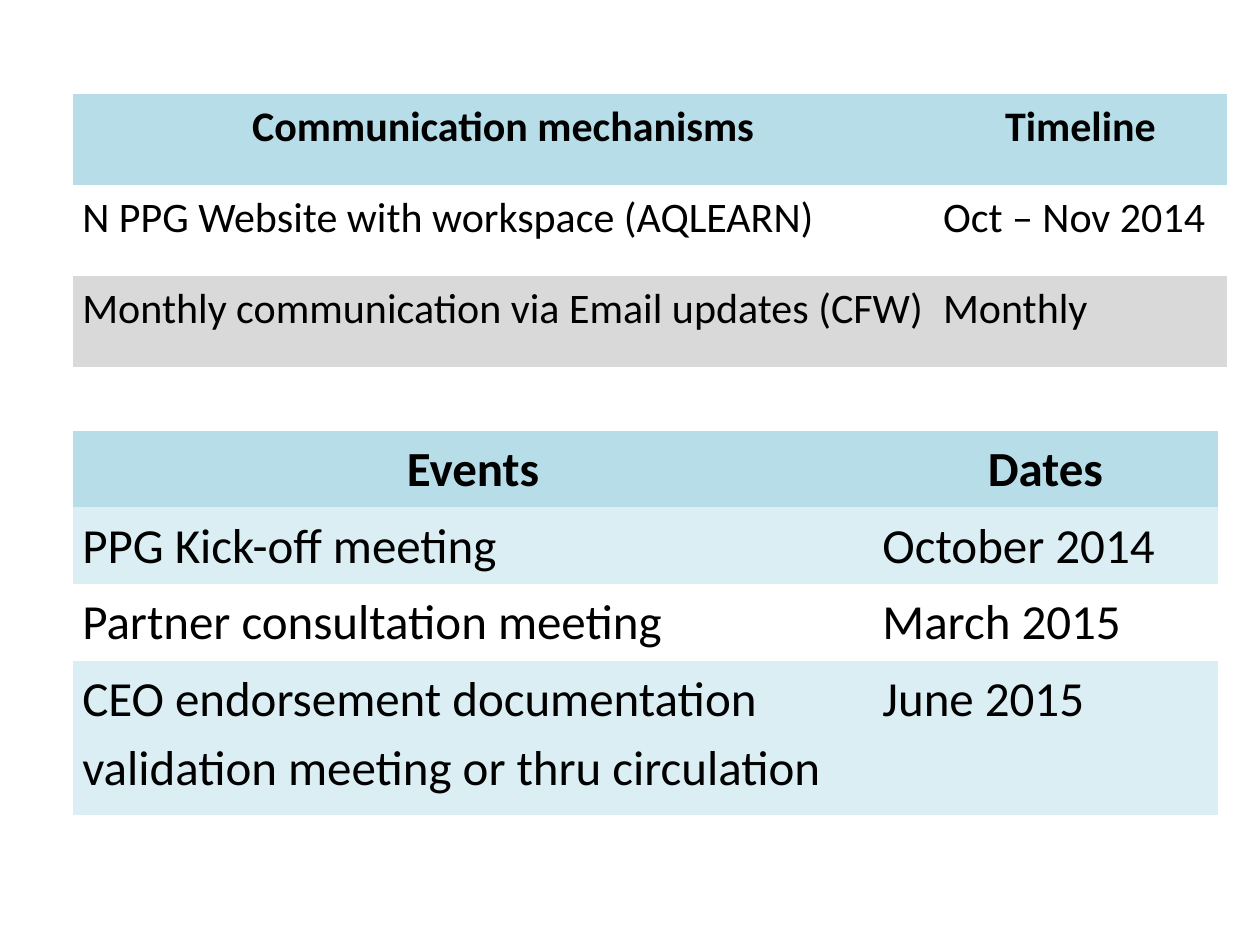
from dataclasses import dataclass

import pptx
import pptx.dml.color
import pptx.enum.text
import pptx.oxml.ns
import pptx.util

Cm = pptx.util.Cm
ALIGN = pptx.enum.text.PP_ALIGN


@dataclass(frozen=True)
class Theme:
    font: str = "Calibri"
    text: str = "000000"
    header: str = "B6DDE8"
    grey_band: str = "D9D9D9"
    blue_band: str = "DAEEF3"
    plan_size: int = 24
    event_size: int = 28
    line_spacing: float = 1.15
    plain_style: str = "{2D5ABB26-0587-4C30-8999-92F81FD0307C}"


THEME = Theme()


@dataclass(frozen=True)
class Row:
    texts: tuple[str, str]
    height: float
    fill: str | None = None


@dataclass(frozen=True)
class Schedule:
    top: float
    widths: tuple[float, float]
    size: int
    rows: tuple[Row, ...]
    left: float = 1.47


SCHEDULES = (
    Schedule(1.9, (17.35, 5.92), THEME.plan_size, (
        Row(("Communication mechanisms", "Timeline"), 1.83, THEME.header),
        Row(("N PPG Website with workspace (AQLEARN)", "Oct – Nov 2014"), 1.83),
        Row(("Monthly communication via Email updates (CFW)", "Monthly"),
            1.83, THEME.grey_band),
    )),
    Schedule(8.68, (16.13, 6.95), THEME.event_size, (
        Row(("Events", "Dates"), 1.55, THEME.header),
        Row(("PPG Kick-off meeting", "October 2014"), 1.55, THEME.blue_band),
        Row(("Partner consultation meeting", "March 2015"), 1.55),
        Row(("CEO endorsement documentation validation meeting or thru circulation",
             "June 2015"), 3.1, THEME.blue_band),
    )),
)


def write_text(tf, text: str, *, size: int, bold: bool = False,
               align=ALIGN.LEFT) -> None:
    p = tf.paragraphs[0]
    p.alignment = align
    p.line_spacing = THEME.line_spacing
    r = p.add_run()
    r.text = text
    r.font.name = THEME.font
    r.font.size = pptx.util.Pt(size)
    r.font.bold = bold
    r.font.color.rgb = pptx.dml.color.RGBColor.from_string(THEME.text)


def fill_cell(cell, fill: str | None) -> None:
    cell.margin_left = cell.margin_right = Cm(0.19)
    cell.margin_top = cell.margin_bottom = 0
    if fill is None:
        cell.fill.background()
    else:
        cell.fill.solid()
        cell.fill.fore_color.rgb = pptx.dml.color.RGBColor.from_string(fill)


def draw_schedule(s, schedule: Schedule) -> None:
    rows, widths = schedule.rows, schedule.widths
    table = s.shapes.add_table(
        len(rows), len(widths), Cm(schedule.left), Cm(schedule.top),
        Cm(sum(widths)), Cm(sum(row.height for row in rows))).table
    table.horz_banding = False
    style = table._tbl.tblPr.find(pptx.oxml.ns.qn("a:tableStyleId"))
    style.text = THEME.plain_style
    for column, width in zip(table.columns, widths):
        column.width = Cm(width)
    for i, row in enumerate(rows):
        table.rows[i].height = Cm(row.height)
        header = i == 0
        for j, text in enumerate(row.texts):
            cell = table.cell(i, j)
            fill_cell(cell, row.fill)
            write_text(cell.text_frame, text, size=schedule.size, bold=header,
                       align=ALIGN.CENTER if header else ALIGN.LEFT)


def main() -> None:
    prs = pptx.Presentation()
    prs.slide_width, prs.slide_height = Cm(25.4), Cm(19.05)
    s = prs.slides.add_slide(prs.slide_layouts[6])
    for schedule in SCHEDULES:
        draw_schedule(s, schedule)
    prs.save("out.pptx")


if __name__ == "__main__":
    main()
